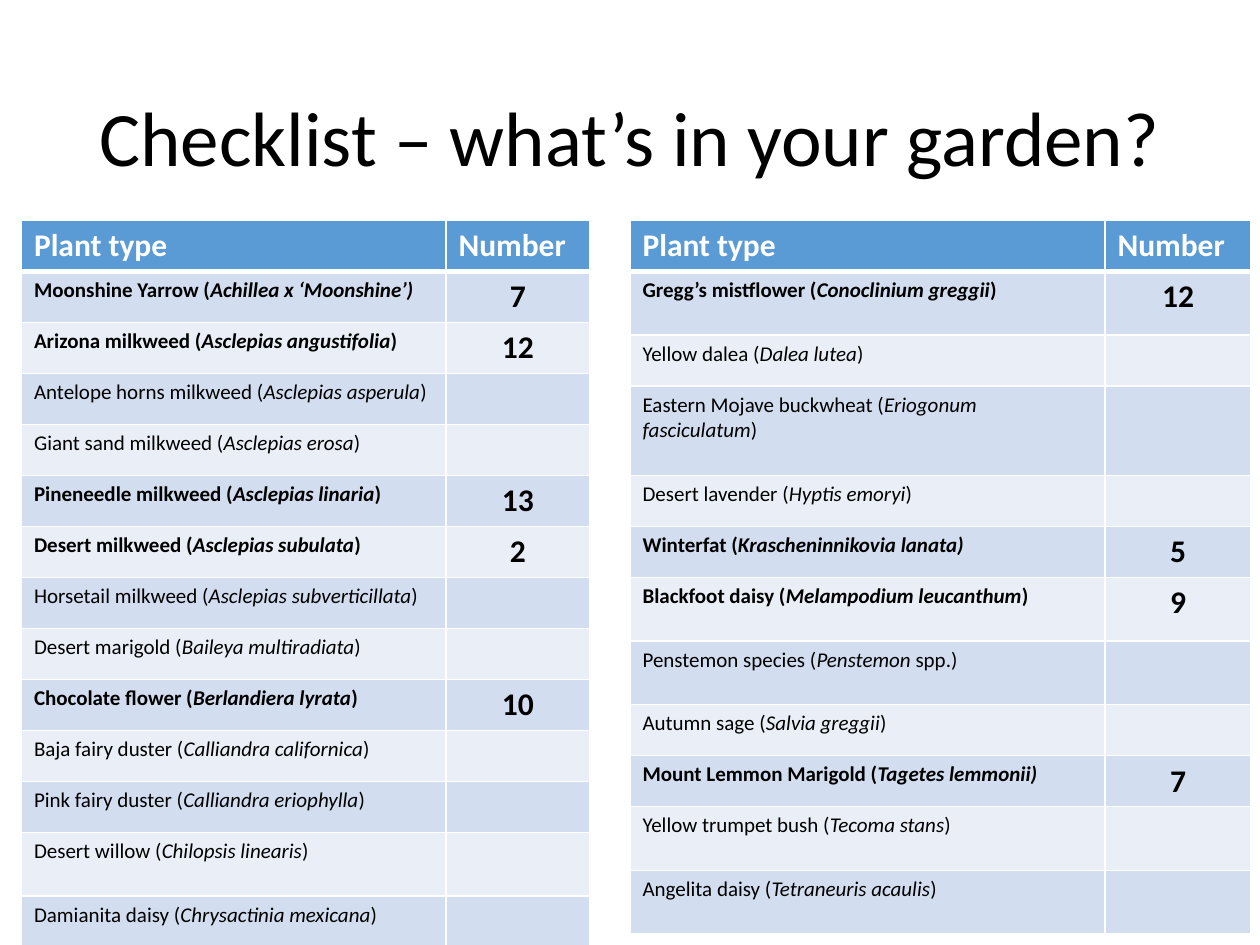
from lxml.etree import SubElement
from pptx import Presentation
from pptx.dml.color import RGBColor
from pptx.enum.text import MSO_ANCHOR, PP_ALIGN
from pptx.oxml.ns import qn
from pptx.util import Inches, Pt

WIDTH, HEIGHT = 10, 7.5
ROW = 0.405  # height of a one-line row
TALL = 0.505  # row with room below its line
HEADER, BANDS = "5B9BD5", ("D2DEEF", "EAEFF7")

# Plant name with the Latin part between asterisks, number counted, row height
LEFT_PLANTS = [
    ("Moonshine Yarrow (*Achillea x ‘Moonshine’)*", "7", ROW),
    ("Arizona milkweed (*Asclepias angustifolia*)", "12", ROW),
    ("Antelope horns milkweed (*Asclepias asperula*)", "", ROW),
    ("Giant sand milkweed (*Asclepias erosa*)", "", ROW),
    ("Pineneedle milkweed (*Asclepias linaria*)", "13", ROW),
    ("Desert milkweed (*Asclepias subulata*)", "2", ROW),
    ("Horsetail milkweed (*Asclepias subverticillata*)", "", ROW),
    ("Desert marigold (*Baileya multiradiata*)", "", ROW),
    ("Chocolate flower (*Berlandiera lyrata*)", "10", ROW),
    ("Baja fairy duster (*Calliandra californica*)", "", ROW),
    ("Pink fairy duster (*Calliandra eriophylla*)", "", ROW),
    ("Desert willow (*Chilopsis linearis*)", "", TALL),
    ("Damianita daisy (*Chrysactinia mexicana*)", "", ROW),
]
RIGHT_PLANTS = [
    ("Gregg’s mistflower (*Conoclinium greggii*)", "12", TALL),
    ("Yellow dalea (*Dalea lutea*)", "", ROW),
    ("Eastern Mojave buckwheat (*Eriogonum fasciculatum*)", "", 0.71),
    ("Desert lavender (*Hyptis emoryi*)", "", ROW),
    ("Winterfat (*Krascheninnikovia lanata)*", "5", ROW),
    ("Blackfoot daisy (*Melampodium leucanthum*)", "9", TALL),
    ("Penstemon species (*Penstemon *spp.)", "", TALL),
    ("Autumn sage (*Salvia greggii*)", "", ROW),
    ("Mount Lemmon Marigold (*Tagetes lemmonii)*", "7", ROW),
    ("Yellow trumpet bush (*Tecoma stans*)", "", TALL),
    ("Angelita daisy (*Tetraneuris acaulis*)", "", TALL),
]


def color(value):
    return RGBColor.from_string(value)


def write(para, text, ink="000000", **formats):
    """Add text to a paragraph, with every second part in italics."""
    for index, part in enumerate(text.split("*")):
        if not part:
            continue
        span = para.add_run()
        span.text = part
        span.font.color.rgb = color(ink)
        settings = {"name": "Calibri", "italic": index % 2 == 1, **formats}
        for key, value in settings.items():
            setattr(span.font, key, value)


def add_borders(cell, top, bottom):
    """Draw white lines on the four sides, widths in points."""
    properties = cell._tc.get_or_add_tcPr()
    widths = {"a:lnL": 1, "a:lnR": 1, "a:lnT": top, "a:lnB": bottom}
    for index, (side, width) in enumerate(widths.items()):
        line = SubElement(properties, qn(side), w=str(Pt(width)))
        fill = SubElement(line, qn("a:solidFill"))
        SubElement(fill, qn("a:srgbClr"), val="FFFFFF")
        properties.insert(index, line)


def add_title(page, box, text):
    frame = page.shapes.add_textbox(*map(Inches, box)).text_frame
    frame.word_wrap = True
    frame.vertical_anchor = MSO_ANCHOR.MIDDLE
    para = frame.paragraphs[0]
    para.line_spacing = 0.9
    write(para, text, size=Pt(44))


def add_checklist(page, left, top, columns, plants):
    rows = [("Plant type", "Number", ROW)] + plants
    height = sum(row[2] for row in rows)
    box = (left, top, sum(columns), height)
    table = page.shapes.add_table(len(rows), 2, *map(Inches, box)).table
    for column, width in zip(table.columns, columns):
        column.width = Inches(width)

    for index, (plant, number, row_height) in enumerate(rows):
        table.rows[index].height = Inches(row_height)
        header = index == 0
        for place, text in enumerate((plant, number)):
            cell = table.cell(index, place)
            cell.fill.solid()
            cell.fill.fore_color.rgb = color(HEADER if header else BANDS[(index - 1) % 2])
            add_borders(cell, top=3 if index == 1 else 1, bottom=3 if header else 1)
            para = cell.text_frame.paragraphs[0]
            if place == 1 and not header:
                para.alignment = PP_ALIGN.CENTER
            # Plants that were counted stand in bold
            write(para, text, ink="FFFFFF" if header else "000000",
                  size=Pt(18 if header or place == 1 else 12), bold=bool(number))


def main():
    deck = Presentation()
    deck.slide_width, deck.slide_height = Inches(WIDTH), Inches(HEIGHT)
    page = deck.slides.add_slide(deck.slide_layouts[6])
    add_title(page, (0.69, 0.4, 8.62, 1.45), "Checklist – what’s in your garden?")
    top = 1.75
    add_checklist(page, 5, top, (3.77, 1.16), RIGHT_PLANTS)
    add_checklist(page, 0.17, top, (3.37, 1.14), LEFT_PLANTS)
    deck.save("out.pptx")


if __name__ == "__main__":
    main()
